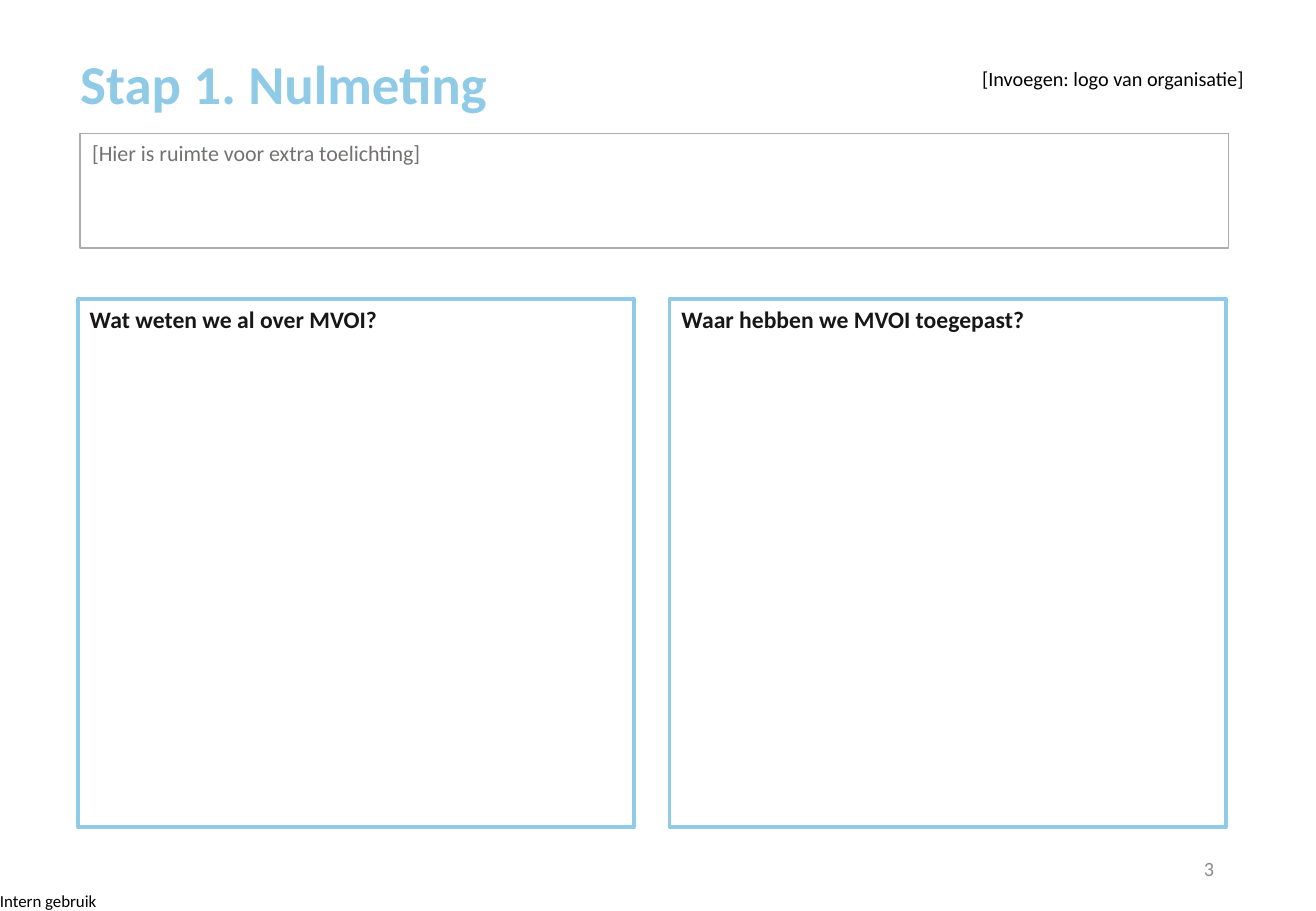
"""Builds the worksheet slide for step 1, the baseline measurement."""
from pptx import Presentation
from pptx.dml.color import RGBColor
from pptx.enum.shapes import MSO_SHAPE
from pptx.enum.text import MSO_ANCHOR, PP_ALIGN
from pptx.util import Inches, Pt

RECT = MSO_SHAPE.RECTANGLE
TOP, MID, LOW = MSO_ANCHOR.TOP, MSO_ANCHOR.MIDDLE, MSO_ANCHOR.BOTTOM
LEFT, MIDDLE, RIGHT = PP_ALIGN.LEFT, PP_ALIGN.CENTER, PP_ALIGN.RIGHT
COLORS = {
    "sky": "8FCAE7", "ink": "181717", "black": "000000", "white": "FFFFFF",
    "edge": "AFABAB", "hint": "767171", "number": "8C8C8C",
}


def color(name):
    return RGBColor.from_string(COLORS[name])


def write(shape, text, size, tint, bold=False, align=LEFT, anchor=TOP, pad=(0.1, 0.05)):
    frame = shape.text_frame
    side, edge = map(Inches, pad)
    form = {
        "word_wrap": True, "vertical_anchor": anchor,
        "margin_left": side, "margin_right": side,
        "margin_top": edge, "margin_bottom": edge,
    }
    for key, value in form.items():
        setattr(frame, key, value)
    par = frame.paragraphs[0]
    par.alignment = align
    run = par.add_run()
    run.text = text
    for key, value in {"name": "Calibri", "size": Pt(size), "bold": bold}.items():
        setattr(run.font, key, value)
    run.font.color.rgb = color(tint)
    return par


deck = Presentation()
deck.slide_width, deck.slide_height = Inches(10.83), Inches(7.5)
slide = deck.slides.add_slide(deck.slide_layouts[6])
shapes = slide.shapes

label = shapes.add_textbox(*map(Inches, (0, 7.33, 0.83, 0.17)))
write(label, "Intern gebruik", 10, "black", pad=(0, 0))

title = shapes.add_textbox(*map(Inches, (0.58, 0, 10.09, 1)))
head = write(title, "Stap 1. Nulmeting", 32.5, "sky", bold=True, anchor=LOW, pad=(0.08, 0.04))
head.line_spacing = 0.9

number = shapes.add_textbox(*map(Inches, (7.65, 6.95, 2.44, 0.4)))
write(number, "3", 12, "number", align=RIGHT, anchor=MID)

ask = {"size": 14, "tint": "ink", "bold": True}
note = {"size": 13, "tint": "hint"}
logo = {"size": 12, "tint": "black", "align": MIDDLE, "anchor": MID}
boxes = [
    ((0.64, 2.46, 4.58, 4.35), None, ("sky", 2.25), "Wat weten we al over MVOI?", ask),
    ((5.51, 2.46, 4.58, 4.35), None, ("sky", 2.25), "Waar hebben we MVOI toegepast?", ask),
    ((0.66, 1.1, 9.45, 0.94), "white", ("edge", 1), "[Hier is ruimte voor extra toelichting]", note),
    ((7.94, 0.29, 2.44, 0.71), "white", None, "[Invoegen: logo van organisatie]", logo),
]
for place, fill, line, text, form in boxes:
    box = shapes.add_shape(RECT, *map(Inches, place))
    box.shadow.inherit = False
    if fill:
        box.fill.solid()
        box.fill.fore_color.rgb = color(fill)
    else:
        box.fill.background()
    if line:
        box.line.color.rgb = color(line[0])
        box.line.width = Pt(line[1])
    else:
        box.line.fill.background()
    write(box, text, **form)

deck.save("out.pptx")
